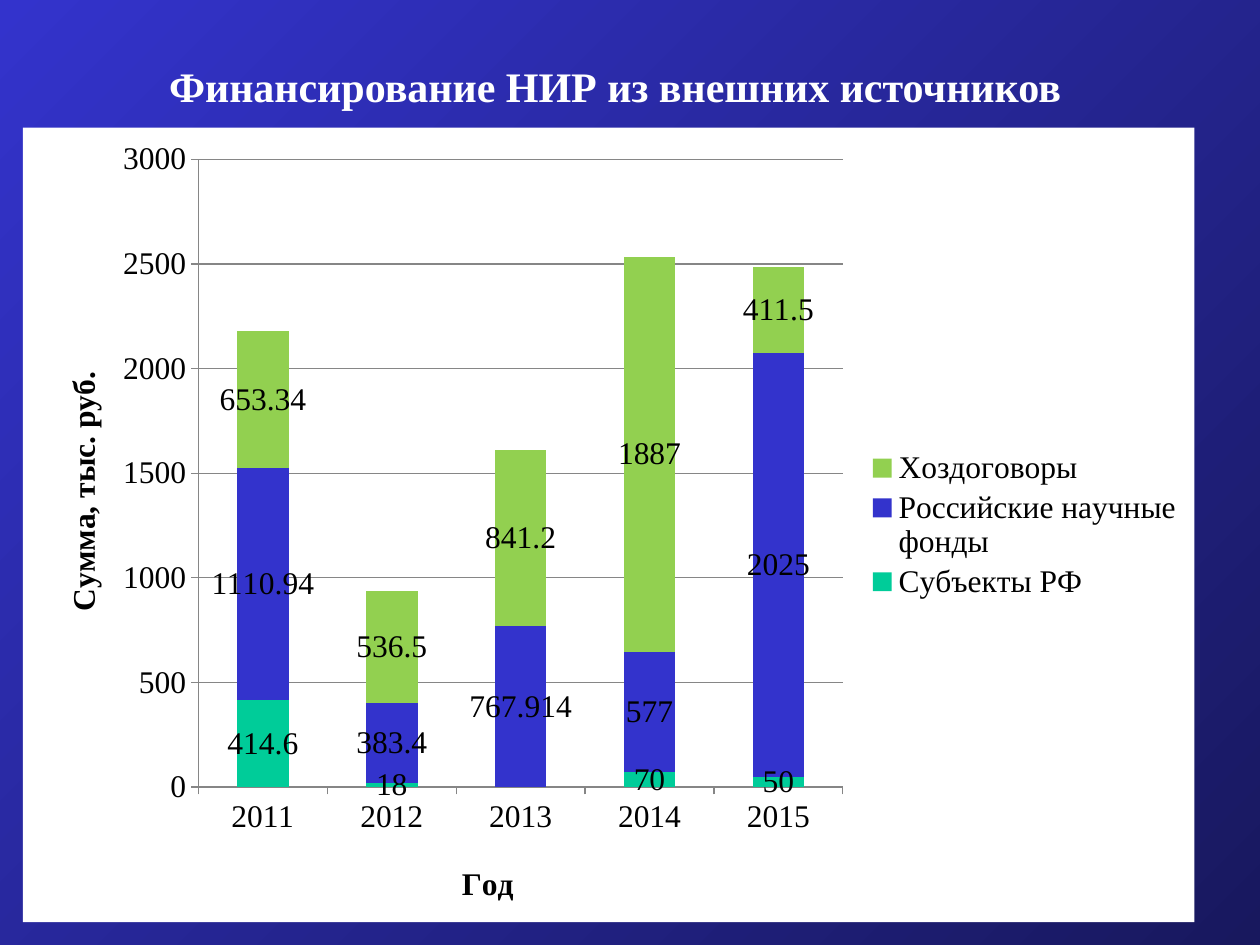
from lxml.etree import Element, SubElement
from pptx import Presentation
from pptx.chart.data import CategoryChartData
from pptx.dml.color import RGBColor
from pptx.enum.chart import XL_CHART_TYPE, XL_LEGEND_POSITION, XL_TICK_MARK
from pptx.enum.text import MSO_ANCHOR, PP_ALIGN
from pptx.oxml.ns import qn
from pptx.util import Pt

WHITE = RGBColor(0xFF, 0xFF, 0xFF)
BLACK = RGBColor(0, 0, 0)
GRAY = RGBColor(0x86, 0x86, 0x86)
BLUE = RGBColor(0x33, 0x33, 0xCC)
NAVY = RGBColor(0x18, 0x18, 0x5E)
TEAL = RGBColor(0x00, 0xCC, 0x99)
GREEN = RGBColor(0x92, 0xD0, 0x50)
FACE = "Times New Roman"

YEARS = ["2011", "2012", "2013", "2014", "2015"]
FUNDS = [
    ("Субъекты РФ", [414.6, 18, None, 70, 50], TEAL),
    ("Российские научные фонды", [1110.94, 383.4, 767.914, 577, 2025], BLUE),
    ("Хоздоговоры", [653.34, 536.5, 841.2, 1887, 411.5], GREEN),
]


def set_font(font, size, color, bold=False):
    font.name = FACE
    font.size = Pt(size)
    font.bold = bold
    font.color.rgb = color


def set_back(slide):
    fill = slide.background.fill
    fill.gradient()
    fill.gradient_angle = 315
    for stop, color in zip(fill.gradient_stops, (BLUE, NAVY)):
        stop.color.rgb = color


def set_title(slide, text):
    title = slide.shapes.title
    title.left, title.top = Pt(88), Pt(31)
    title.width, title.height = Pt(527), Pt(36)
    frame = title.text_frame
    frame.text = text
    frame.vertical_anchor = MSO_ANCHOR.MIDDLE
    para = frame.paragraphs[0]
    para.alignment = PP_ALIGN.CENTER
    set_font(para.font, 24, WHITE, True)


def place(node, index, inner=False, **box):
    for old in node.findall(qn("c:layout")):
        node.remove(old)
    layout = Element(qn("c:layout"))
    node.insert(index, layout)
    manual = SubElement(layout, qn("c:manualLayout"))
    if inner:
        SubElement(manual, qn("c:layoutTarget")).set("val", "inner")
    for key in ("x", "y"):
        SubElement(manual, qn(f"c:{key}Mode")).set("val", "edge")
    for key, value in box.items():
        SubElement(manual, qn(f"c:{key}")).set("val", str(value))


def set_axis(axis, text, x, y):
    axis.major_tick_mark = XL_TICK_MARK.OUTSIDE
    axis.minor_tick_mark = XL_TICK_MARK.NONE
    set_line(axis.format.line)
    set_font(axis.tick_labels.font, 18, BLACK)
    title = axis.axis_title
    title.text_frame.text = text
    set_font(title.text_frame.paragraphs[0].font, 18, BLACK, True)
    place(title._element, 1, x=x, y=y)


def set_line(line):
    line.color.rgb = GRAY
    line.width = Pt(0.75)


def set_bars(plot):
    plot.gap_width = 150
    plot.overlap = 100
    plot.vary_by_categories = False
    for bars, (name, values, color) in zip(plot.series, FUNDS):
        bars.format.fill.solid()
        bars.format.fill.fore_color.rgb = color
        bars.invert_if_negative = False
        labels = bars.data_labels
        labels.show_value = True
        set_font(labels.font, 18, BLACK)


def set_area(chart):
    props = Element(qn("c:spPr"))
    fill = SubElement(props, qn("a:solidFill"))
    SubElement(fill, qn("a:srgbClr")).set("val", str(WHITE))
    chart._chartSpace.chart.addnext(props)


def add_graph(slide):
    data = CategoryChartData()
    data.categories = YEARS
    for name, values, color in FUNDS:
        data.add_series(name, values)
    chart = slide.shapes.add_chart(
        XL_CHART_TYPE.COLUMN_STACKED, Pt(13), Pt(73), Pt(669.5), Pt(454), data
    ).chart
    chart.has_title = False
    set_font(chart.font, 18, BLACK)
    set_area(chart)
    set_bars(chart.plots[0])
    set_axis(chart.category_axis, "Год", 0.37, 0.92)
    axis = chart.value_axis
    set_axis(axis, "Сумма, тыс. руб.", 0.03, 0.3)
    axis.minimum_scale, axis.maximum_scale = 0, 3000
    axis.major_unit = 500
    axis.has_major_gridlines = True
    set_line(axis.major_gridlines.format.line)
    chart.has_legend = True
    legend = chart.legend
    legend.position = XL_LEGEND_POSITION.RIGHT
    legend.include_in_layout = False
    set_font(legend.font, 18, BLACK)
    place(legend._element, 1, x=0.72, y=0.4, w=0.27, h=0.2)
    area = chart._chartSpace.chart.plotArea
    place(area, 0, True, x=0.15, y=0.04, w=0.55, h=0.79)


def main():
    deck = Presentation()
    deck.slide_width, deck.slide_height = Pt(720), Pt(540)
    slide = deck.slides.add_slide(deck.slide_layouts[5])
    set_back(slide)
    set_title(slide, "Финансирование НИР из внешних источников")
    add_graph(slide)
    deck.save("out.pptx")


if __name__ == "__main__":
    main()
